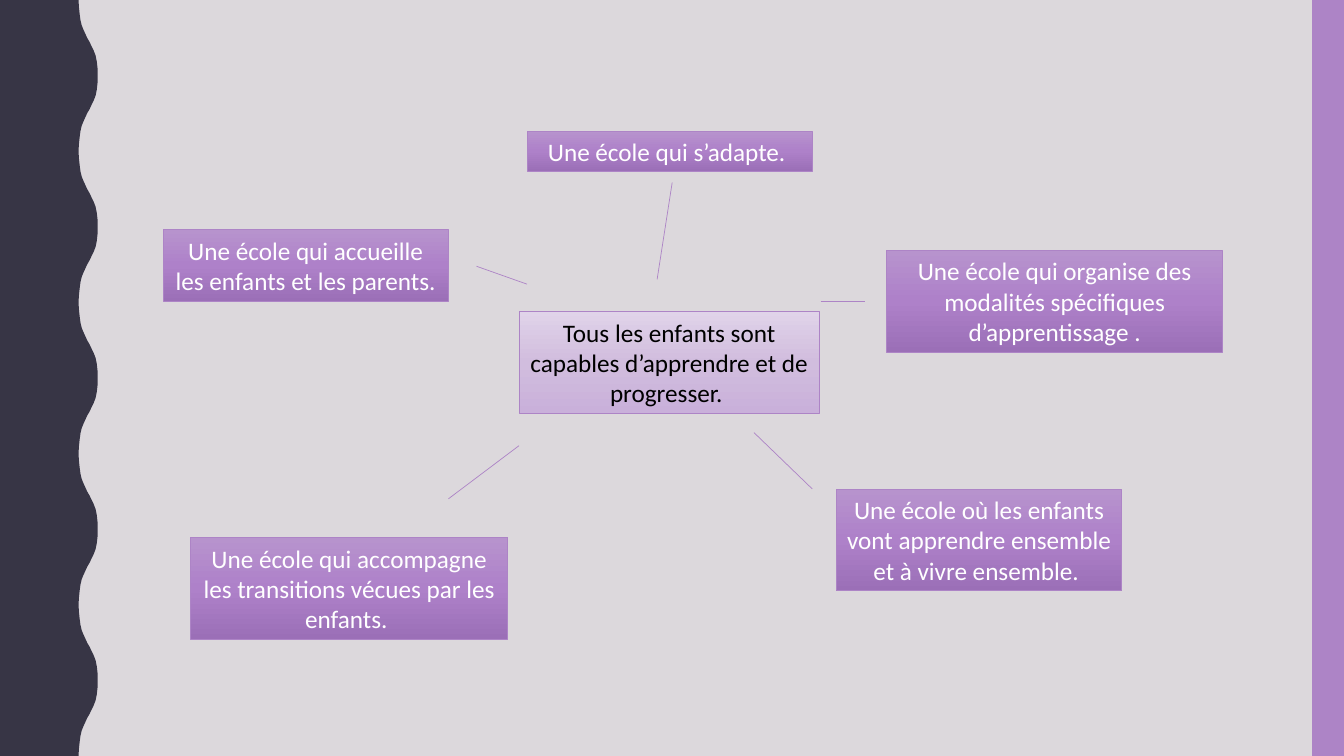
from copy import deepcopy

from pptx import Presentation
from pptx import util as u
from pptx.dml.color import RGBColor
from pptx.enum import shapes, text
from pptx.oxml.ns import qn
from lxml import etree

COLORS = {"background": "DCD8DC", "wave": "373545", "accent": "AD84C6",
          "black": "000000", "white": "FFFFFF"}
LIGHT = ("E0D3E9", "D1BDDE", "C9B0DA")
DARK = ("B793CD", "AE81C9", "9B6FB7")
WIDTH, HEIGHT = 33.87, 19.05

# Right edge of the wave: half a period, from trough to crest (cm)
HALF_PERIOD = 1.905
HALF_WAVE = [(1.98, 0), (1.99, 0.18), (2.01, 0.36), (2.03, 0.51), (2.06, 0.64),
             (2.1, 0.74), (2.15, 0.85), (2.2, 0.96), (2.26, 1.06), (2.31, 1.17),
             (2.36, 1.27), (2.41, 1.4), (2.44, 1.55), (2.46, 1.73)]

CENTER = ("Tous les enfants sont capables d’apprendre et de progresser. ",
          13.08, 7.85, 7.57, 2.57)
SCHOOLS = [
    ("Une école qui s’adapte. ", 13.28, 3.3, 7.19, 1.02),
    ("Une école qui organise des modalités spécifiques d’apprentissage .",
     22.35, 6.3, 8.46, 2.57),
    ("Une école où les enfants vont apprendre ensemble et à vivre ensemble. ",
     21.08, 12.32, 7.19, 2.57),
    ("Une école qui accueille les enfants et les parents.", 4.11, 5.79, 7.19, 1.8),
    ("Une école qui accompagne les transitions vécues par les enfants. ",
     4.8, 13.54, 8, 2.57),
]
LINKS = [(16.56, 7.04, 16.94, 4.6), (20.68, 7.59, 21.79, 7.59),
         (19, 10.9, 20.47, 12.32), (13.08, 11.23, 11.3, 12.57),
         (12.01, 6.71, 13.28, 7.16)]


def rgb(name):
    return RGBColor.from_string(COLORS.get(name, name))


def write(tf, content, size=18, font="Calibri", color="white",
          align=text.PP_ALIGN.CENTER):
    tf.word_wrap = True
    tf.vertical_anchor = text.MSO_ANCHOR.MIDDLE
    p = tf.paragraphs[0]
    p.alignment = align
    r = p.add_run()
    r.text = content
    r.font.size, r.font.name = u.Pt(size), font
    r.font.color.rgb = rgb(color)


class MindMap:
    """Style of the map and the slide it is drawn on."""

    def __init__(self, s, accent="accent", line_width=0.5):
        self.s, self.accent, self.line_width = s, accent, line_width

    def background(self, color):
        fill = self.s.background.fill
        fill.solid()
        fill.fore_color.rgb = rgb(color)

    def plain(self, sp, color):
        sp.shadow.inherit = False
        sp.fill.solid()
        sp.fill.fore_color.rgb = rgb(color)
        sp.line.fill.background()

    def rect(self, x, y, w, h):
        return self.s.shapes.add_shape(shapes.MSO_SHAPE.RECTANGLE,
                                       u.Cm(x), u.Cm(y), u.Cm(w), u.Cm(h))

    def bar(self, x, y, w, h):
        self.plain(self.rect(x, y, w, h), self.accent)

    def wave(self, color):
        period = 2 * HALF_PERIOD
        cycle = (HALF_WAVE + [(2.46, HALF_PERIOD)]
                 + [(x, period - y) for x, y in reversed(HALF_WAVE)])
        edge = [(u.Cm(x), u.Cm(y + n * period)) for n in range(5) for x, y in cycle]
        builder = self.s.shapes.build_freeform(0, 0)
        builder.add_line_segments(edge + [(0, u.Cm(HEIGHT))], close=True)
        self.plain(builder.convert_to_shape(), color)

    def outline(self, line):
        line.color.rgb = rgb(self.accent)
        line.width = u.Pt(self.line_width)

    def box(self, content, x, y, w, h, gradient=DARK, color="white"):
        sp = self.rect(x, y, w, h)
        sp.shadow.inherit = False
        sp.fill.gradient()
        sp.fill.gradient_angle = 270
        # Third gradient stop, halfway
        first = sp._element.spPr.find(".//" + qn("a:gs"))
        first.addnext(deepcopy(first))
        for stop, position, shade in zip(sp.fill.gradient_stops, (0, 0.5, 1), gradient):
            stop.position = position
            stop.color.rgb = rgb(shade)
        self.outline(sp.line)
        write(sp.text_frame, content, color=color)

    def link(self, *ends):
        c = self.s.shapes.add_connector(shapes.MSO_CONNECTOR.STRAIGHT,
                                        *(u.Cm(v) for v in ends))
        self.outline(c.line)
        etree.SubElement(c._element.spPr, qn("a:effectLst"))


def main():
    prs = Presentation()
    prs.slide_width, prs.slide_height = u.Cm(WIDTH), u.Cm(HEIGHT)
    mind_map = MindMap(prs.slides.add_slide(prs.slide_layouts[6]))

    # Decor
    mind_map.background("background")
    mind_map.wave("wave")
    mind_map.bar(33.07, 0, 0.8, HEIGHT)

    # Central idea and its branches
    mind_map.box(*CENTER, gradient=LIGHT, color="black")
    for school in SCHOOLS:
        mind_map.box(*school)
    for ends in LINKS:
        mind_map.link(*ends)

    prs.save("out.pptx")


if __name__ == "__main__":
    main()
